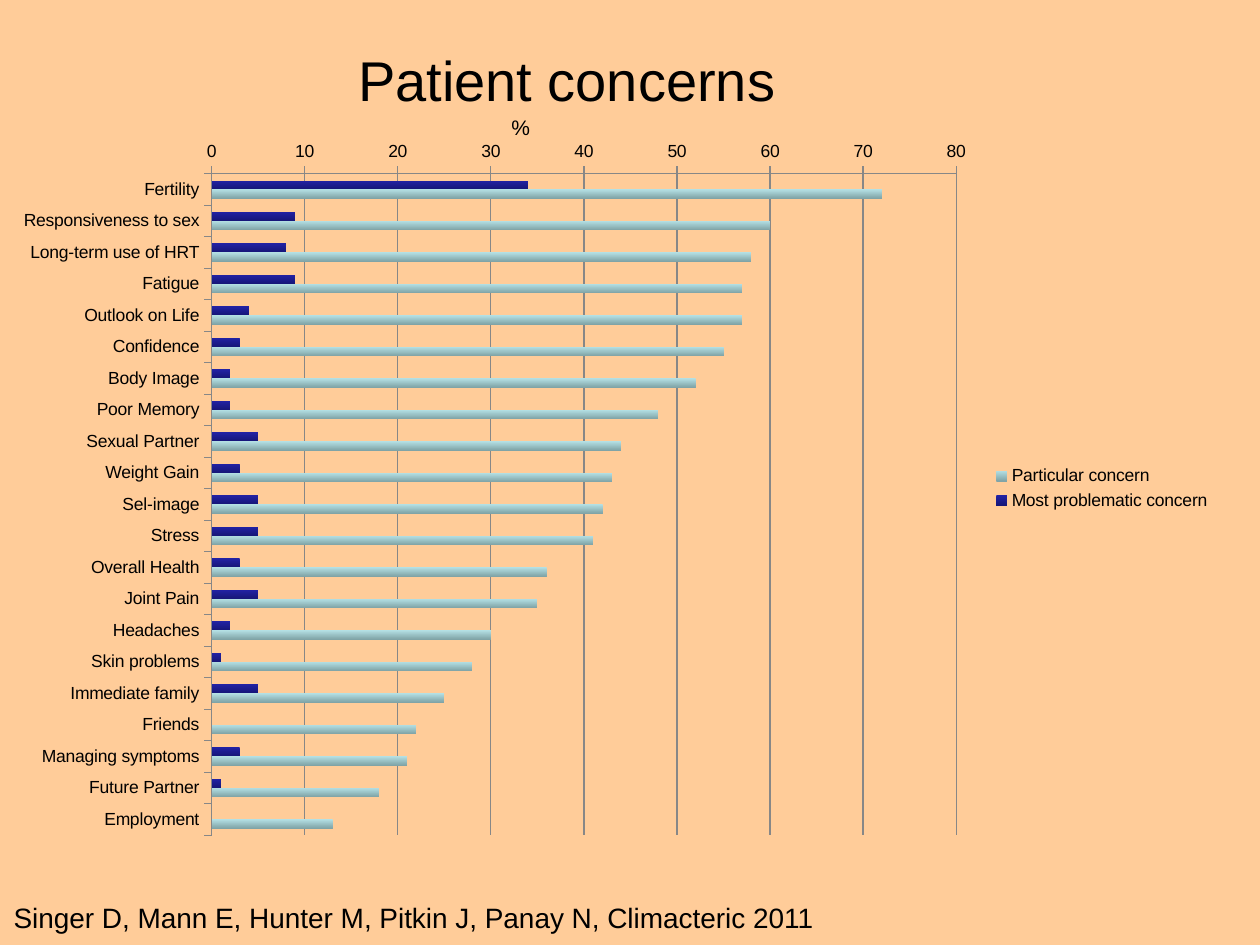
from lxml import etree
from pptx import Presentation
from pptx.chart.data import CategoryChartData
from pptx.dml.color import RGBColor
from pptx.enum.chart import XL_CHART_TYPE, XL_LEGEND_POSITION, XL_TICK_MARK
from pptx.enum.text import MSO_ANCHOR, PP_ALIGN
from pptx.oxml.ns import qn
from pptx.util import Inches, Pt

COLORS = {"background": "FFCC99", "text": "000000", "line": "878787"}
FONT = "Arial"
SERIES_GRADIENTS = {
    "Most problematic concern": ("2222A4", "161678"),
    "Particular concern": ("B4E0E4", "80A4A7"),
}
# concern, most problematic (%), particular (%)
CONCERNS = [
    ("Fertility", 34, 72),
    ("Responsiveness to sex", 9, 60),
    ("Long-term use of HRT", 8, 58),
    ("Fatigue", 9, 57),
    ("Outlook on Life", 4, 57),
    ("Confidence", 3, 55),
    ("Body Image", 2, 52),
    ("Poor Memory", 2, 48),
    ("Sexual Partner", 5, 44),
    ("Weight Gain", 3, 43),
    ("Sel-image", 5, 42),
    ("Stress", 5, 41),
    ("Overall Health", 3, 36),
    ("Joint Pain", 5, 35),
    ("Headaches", 2, 30),
    ("Skin problems", 1, 28),
    ("Immediate family", 5, 25),
    ("Friends", 0, 22),
    ("Managing symptoms", 3, 21),
    ("Future Partner", 1, 18),
    ("Employment", 0, 13),
]
CHART_BOX = (0, 1.01, 9.71, 5.73)
PLOT_BOX = (1.68, 1.38, 5.91, 5.25)


def rgb(name):
    return RGBColor.from_string(COLORS[name])


def style_font(font, size):
    for name, value in {"name": FONT, "size": Pt(size)}.items():
        setattr(font, name, value)
    font.color.rgb = rgb("text")


def add_text(page, box, text, size, align=PP_ALIGN.LEFT,
             anchor=MSO_ANCHOR.TOP, wrap=True):
    frame = page.shapes.add_textbox(*map(Inches, box)).text_frame
    frame.word_wrap = wrap
    frame.vertical_anchor = anchor
    para = frame.paragraphs[0]
    para.alignment = align
    span = para.add_run()
    span.text = text
    style_font(span.font, size)


def fix_plot_area(chart, chart_box, plot_box):
    """Set the inner plot area as fractions of the chart."""
    left, top, width, height = chart_box
    plot_left, plot_top, plot_width, plot_height = plot_box
    settings = {
        "layoutTarget": "inner", "xMode": "edge", "yMode": "edge",
        "x": (plot_left - left) / width, "y": (plot_top - top) / height,
        "w": plot_width / width, "h": plot_height / height,
    }
    plot_area = chart.plots[0]._element.getparent()
    layout = plot_area.find(qn("c:layout"))
    if layout is None:
        layout = etree.Element(qn("c:layout"))
        plot_area.insert(0, layout)
    manual = etree.SubElement(layout, qn("c:manualLayout"))
    for tag, value in settings.items():
        etree.SubElement(manual, qn(f"c:{tag}")).set("val", str(value))


def style_axes(chart):
    for axis in (chart.category_axis, chart.value_axis):
        axis.major_tick_mark = XL_TICK_MARK.OUTSIDE
        axis.minor_tick_mark = XL_TICK_MARK.NONE
        axis.format.line.color.rgb = rgb("line")
        style_font(axis.tick_labels.font, 10)
    chart.category_axis.reverse_order = True
    scale = {"minimum_scale": 0, "maximum_scale": 80, "major_unit": 10,
             "has_major_gridlines": True}
    for name, value in scale.items():
        setattr(chart.value_axis, name, value)
    chart.value_axis.major_gridlines.format.line.color.rgb = rgb("line")


def style_bars(plot):
    for name, value in {"gap_width": 150, "overlap": 0, "vary_by_categories": False}.items():
        setattr(plot, name, value)
    for series in plot.series:
        fill = series.format.fill
        fill.gradient()
        fill.gradient_angle = 270
        for stop, color in zip(fill.gradient_stops, SERIES_GRADIENTS[series.name]):
            stop.color.rgb = RGBColor.from_string(color)


def add_concerns_chart(page, box, plot_box):
    names, problematic, particular = zip(*CONCERNS)
    data = CategoryChartData()
    data.categories = names
    for name, values in zip(SERIES_GRADIENTS, (problematic, particular)):
        data.add_series(name, values)
    chart = page.shapes.add_chart(
        XL_CHART_TYPE.BAR_CLUSTERED, *map(Inches, box), data).chart
    style_font(chart.font, 10)
    chart.has_title = False
    chart.has_legend = True
    chart.legend.position = XL_LEGEND_POSITION.RIGHT
    chart.legend.include_in_layout = False
    style_font(chart.legend.font, 10)
    style_axes(chart)
    fix_plot_area(chart, box, plot_box)
    style_bars(chart.plots[0])


def build_concerns_slide(deck):
    page = deck.slides.add_slide(deck.slide_layouts[6])
    fill = page.background.fill
    fill.solid()
    fill.fore_color.rgb = rgb("background")
    add_concerns_chart(page, CHART_BOX, PLOT_BOX)
    add_text(page, (3.96, 0.86, 0.38, 0.3), "%", 12)
    add_text(page, (0, 0, 9, 1.25), "Patient concerns", 32,
             PP_ALIGN.CENTER, MSO_ANCHOR.MIDDLE)
    add_text(page, (0.01, 7.1, 6.63, 0.37),
             "Singer D, Mann E, Hunter M, Pitkin J, Panay N, Climacteric 2011",
             16, wrap=False)


def main():
    deck = Presentation()
    deck.slide_width, deck.slide_height = Inches(10), Inches(7.5)
    build_concerns_slide(deck)
    deck.save("out.pptx")


if __name__ == "__main__":
    main()
